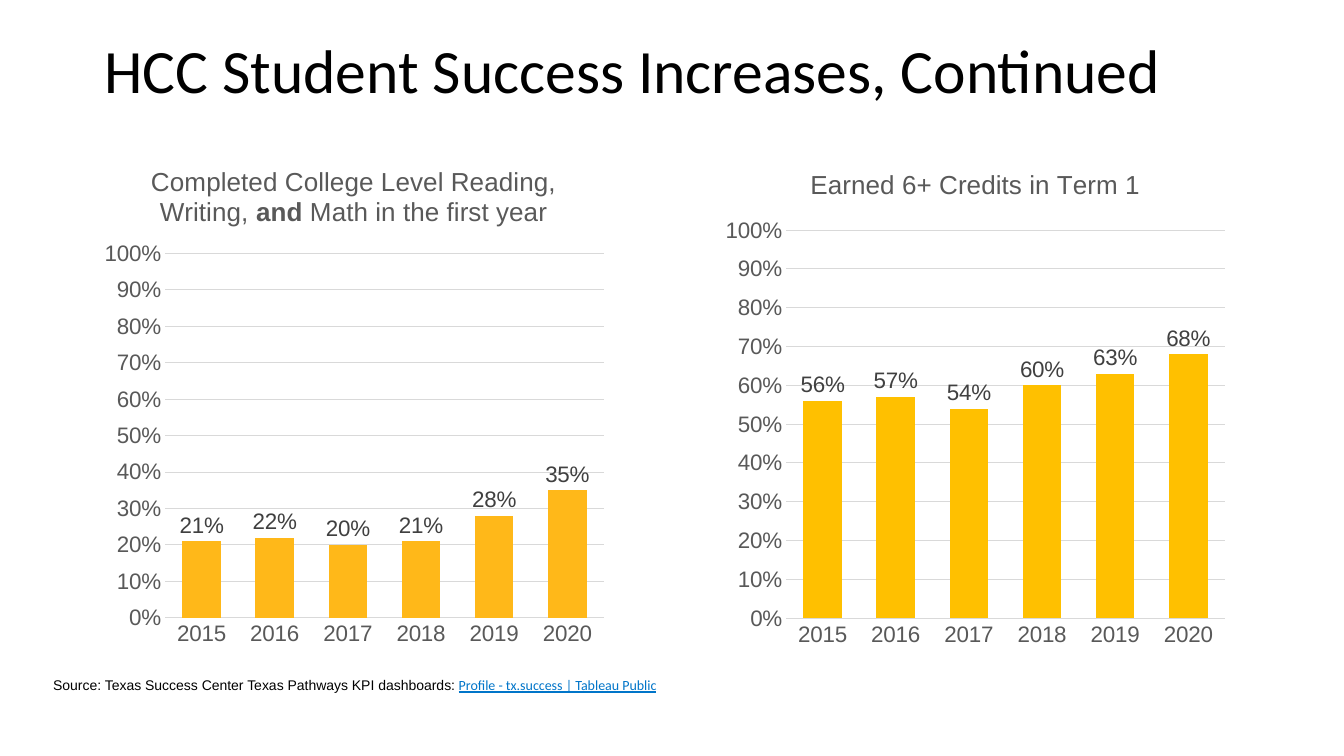
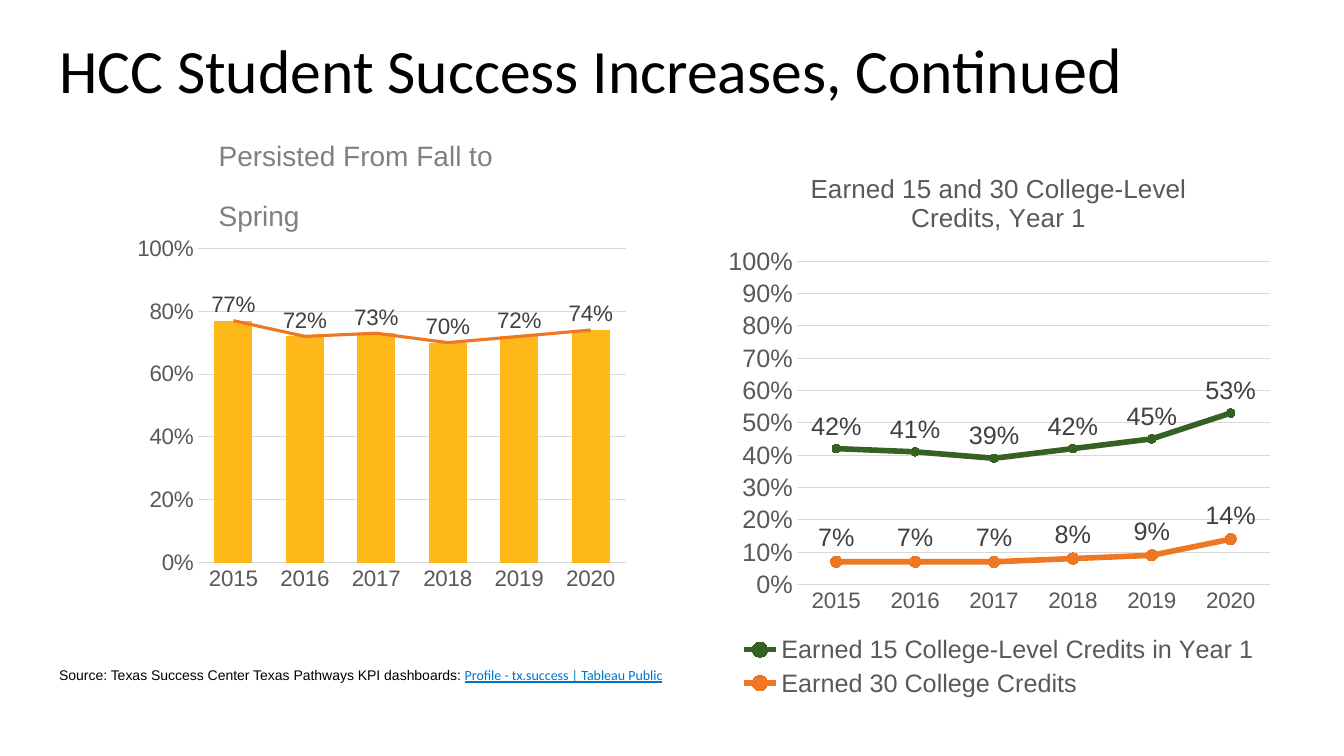
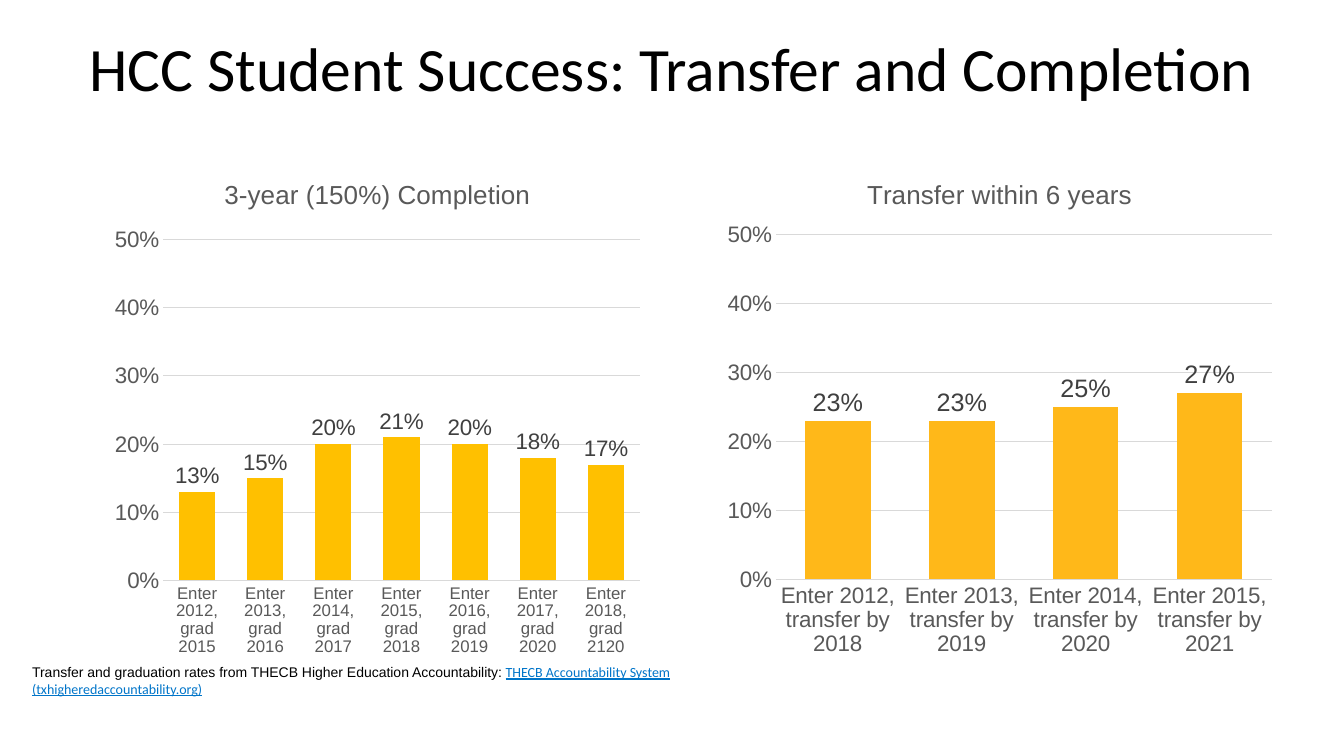
"""Build three slides of student success charts."""
from lxml import etree
from pptx import Presentation
from pptx.chart.data import CategoryChartData
from pptx.dml.color import RGBColor
from pptx.enum.chart import (
    XL_CHART_TYPE as ChartType,
    XL_LABEL_POSITION as LabelPosition,
    XL_LEGEND_POSITION as LegendPosition,
    XL_MARKER_STYLE as MarkerStyle,
    XL_TICK_MARK as TickMark,
)
from pptx.enum.text import MSO_ANCHOR as Anchor
from pptx.oxml import parse_xml
from pptx.oxml.ns import nsdecls, qn
from pptx.util import Cm, Pt

BLACK = RGBColor(0x00, 0x00, 0x00)
GREY = RGBColor(0x59, 0x59, 0x59)
LABEL_GREY = RGBColor(0x40, 0x40, 0x40)
HEADING_GREY = RGBColor(0x80, 0x80, 0x80)
GRID_GREY = RGBColor(0xD9, 0xD9, 0xD9)
LINK_BLUE = RGBColor(0x00, 0x75, 0xC9)
AMBER = RGBColor(0xFF, 0xC0, 0x00)
GOLD = RGBColor(0xFF, 0xB8, 0x19)
ORANGE = RGBColor(0xEF, 0x76, 0x22)
GREEN = RGBColor(0x35, 0x62, 0x22)

YEARS = [str(year) for year in range(2015, 2021)]
KPI_SOURCE = "Source: Texas Success Center Texas Pathways KPI dashboards: "
KPI_LINK = "Profile - tx.success | Tableau Public"


def style_font(font, size=None, color=None, name=None, bold=None, underline=None):
    if size:
        font.size = Pt(size)
    if color is not None:
        font.color.rgb = color
    if name:
        font.name = name
    if bold is not None:
        font.bold = bold
    if underline is not None:
        font.underline = underline


def write_runs(paragraph, runs, **style):
    style_font(paragraph.font, **style)
    for text, own_style in runs:
        run = paragraph.add_run()
        run.text = text
        style_font(run.font, **own_style)


def add_text(slide, box, runs, anchor=Anchor.TOP, spacing=None, **style):
    frame = slide.shapes.add_textbox(*map(Cm, box)).text_frame
    frame.word_wrap = True
    frame.vertical_anchor = anchor
    paragraph = frame.paragraphs[0]
    if spacing:
        paragraph.line_spacing = spacing
    write_runs(paragraph, runs, **style)


def add_title(slide, box, *runs):
    add_text(slide, box, runs, Anchor.MIDDLE, 0.9, size=44, color=BLACK, name="Calibri")


def add_source(slide, box, text, link):
    link_style = {"name": "Calibri", "color": LINK_BLUE, "underline": True}
    add_text(slide, box, [(text, {"name": "Arial", "color": BLACK}), (link, link_style)], size=10)


def set_plot_layout(chart, box, plot_box):
    left, top, width, height = box
    plot_left, plot_top, plot_width, plot_height = plot_box
    fractions = ((plot_left - left) / width, (plot_top - top) / height,
                 plot_width / width, plot_height / height)
    plot_area = chart.element.find(".//" + qn("c:plotArea"))
    for layout in plot_area.findall(qn("c:layout")):
        plot_area.remove(layout)
    layout = parse_xml(f"<c:layout {nsdecls('c')}><c:manualLayout/></c:layout>")
    settings = [("layoutTarget", "inner"), ("xMode", "edge"), ("yMode", "edge")]
    settings += zip("xywh", fractions)
    for tag, value in settings:
        etree.SubElement(layout[0], qn("c:" + tag)).set("val", str(value))
    plot_area.insert(0, layout)


def style_axes(chart, maximum, step, category_size, value_size):
    value_axis, category_axis = chart.value_axis, chart.category_axis
    for axis, size in ((category_axis, category_size), (value_axis, value_size)):
        axis.major_tick_mark = axis.minor_tick_mark = TickMark.NONE
        style_font(axis.tick_labels.font, size, GREY, "Arial")
    value_axis.minimum_scale = 0
    value_axis.maximum_scale = maximum
    value_axis.major_unit = step
    value_axis.tick_labels.number_format = "0%"
    value_axis.tick_labels.number_format_is_linked = False
    value_axis.format.line.fill.background()
    for line in (category_axis.format.line, value_axis.major_gridlines.format.line):
        line.color.rgb = GRID_GREY
        line.width = Pt(0.75)


def add_labels(series, size, position):
    labels = series.data_labels
    labels.show_value = True
    labels.position = position
    labels.number_format = "0%"
    labels.number_format_is_linked = False
    style_font(labels.font, size, LABEL_GREY, "Arial")


def style_line(series, color, width):
    series.smooth = False
    series.format.line.color.rgb = color
    series.format.line.width = Pt(width)


def add_chart(slide, kind, box, plot_box, categories, series_values, title=(),
              maximum=1, step=0.1, category_size=16, value_size=16):
    data = CategoryChartData(number_format="0%")
    data.categories = categories
    for name, values in series_values:
        data.add_series(name, values)
    chart = slide.shapes.add_chart(kind, *map(Cm, box), data).chart
    style_font(chart.font, 10, BLACK, "Arial")
    chart.has_legend = False
    chart.has_title = bool(title)
    if title:
        paragraph = chart.chart_title.text_frame.paragraphs[0]
        write_runs(paragraph, title, size=18.6, color=GREY, name="Arial", bold=False)
        chart.chart_title.include_in_layout = False
    style_axes(chart, maximum, step, category_size, value_size)
    set_plot_layout(chart, box, plot_box)
    chart.plots[0].vary_by_categories = False
    return chart


def add_columns(slide, box, plot_box, categories, values, color, title=(),
                label_size=16, trend=None, **axis_options):
    series_values = [("Series 1", values)]
    if trend:
        series_values.append(("Series 2", trend))
    chart = add_chart(slide, ChartType.COLUMN_CLUSTERED, box, plot_box,
                      categories, series_values, title, **axis_options)
    plot = chart.plots[0]
    plot.gap_width = 89
    plot.overlap = -27
    columns = plot.series[0]
    columns.format.fill.solid()
    columns.format.fill.fore_color.rgb = color
    add_labels(columns, label_size, LabelPosition.OUTSIDE_END)
    if trend:
        move_last_series_to_line(chart)
        line = chart.plots[1].series[0]
        style_line(line, ORANGE, 2.25)
        line.marker.style = MarkerStyle.NONE


def move_last_series_to_line(chart):
    bar_chart = chart.element.find(".//" + qn("c:barChart"))
    series = bar_chart.findall(qn("c:ser"))[-1]
    for element in series.findall(qn("c:invertIfNegative")):
        series.remove(element)
    line_chart = parse_xml(
        f"<c:lineChart {nsdecls('c')}><c:grouping val='standard'/>"
        "<c:varyColors val='0'/></c:lineChart>"
    )
    line_chart.append(series)
    etree.SubElement(line_chart, qn("c:marker")).set("val", "1")
    for axis_id in bar_chart.findall(qn("c:axId")):
        etree.SubElement(line_chart, qn("c:axId")).set("val", axis_id.get("val"))
    bar_chart.addnext(line_chart)


def add_credit_lines(slide):
    chart = add_chart(
        slide, ChartType.LINE_MARKERS, (18.06, 3.78, 14.22, 13.92), (20.08, 6.58, 11.93, 8.15), YEARS,
        [("Earned 15 College-Level Credits in Year 1", (0.42, 0.41, 0.39, 0.42, 0.45, 0.53)),
         ("Earned 30 College Credits", (0.07, 0.07, 0.07, 0.08, 0.09, 0.14))],
        [("Earned 15 and 30 College-Level Credits, Year 1", {})], value_size=18,
    )
    for series, color, marker_size in zip(chart.plots[0].series, (GREEN, ORANGE), (6, 8)):
        style_line(series, color, 4)
        series.marker.style = MarkerStyle.CIRCLE
        series.marker.size = marker_size
        series.marker.format.fill.solid()
        series.marker.format.fill.fore_color.rgb = color
        series.marker.format.line.color.rgb = color
        add_labels(series, 18, LabelPosition.ABOVE)
    chart.has_legend = True
    chart.legend.position = LegendPosition.BOTTOM
    chart.legend.include_in_layout = False
    style_font(chart.legend.font, 18, GREY, "Arial")


def build_first_year(slide):
    add_columns(slide, (18.03, 3.71, 13.11, 12.85), (19.81, 5.8, 11.06, 9.78), YEARS,
                (0.56, 0.57, 0.54, 0.6, 0.63, 0.68), AMBER,
                [("Earned 6+ Credits in Term 1", {})])
    add_columns(slide, (2.36, 3.71, 13.11, 12.85), (4.16, 6.39, 11.06, 9.18), YEARS,
                (0.21, 0.22, 0.2, 0.21, 0.28, 0.35), GOLD,
                [("Completed College Level Reading, Writing, ", {}), ("and", {"bold": True}),
                 (" Math in the first year", {})])
    add_title(slide, (2.38, 0, 29.51, 3.71), ("HCC Student Success Increases, Continued", {}))
    add_source(slide, (1.09, 16.92, 16.94, 0.69), KPI_SOURCE, KPI_LINK)


def build_persistence(slide):
    add_title(slide, (1.24, 0, 32.63, 3.71),
              ("HCC Student Success Increases, Continu", {}), ("ed", {"name": "Arial"}))
    persisted = (0.77, 0.72, 0.73, 0.7, 0.72, 0.74)
    add_columns(slide, (2.92, 5.94, 13.23, 10.24), (4.98, 6.26, 10.81, 7.92), YEARS,
                persisted, GOLD, trend=persisted, step=0.2)
    add_credit_lines(slide)
    add_text(slide, (5.26, 2.7, 8.53, 3.28), [("Persisted From Fall to Spring", {})],
             Anchor.MIDDLE, Pt(43), size=20, color=HEADING_GREY, name="Arial")
    add_source(slide, (1.24, 16.67, 16.94, 0.69), KPI_SOURCE, KPI_LINK)


def build_completion(slide):
    transfers = [f"Enter {year}, transfer by {year + 6}" for year in range(2012, 2016)]
    graduations = [f"Enter {year}, grad {year + 3}" for year in range(2012, 2018)]
    graduations.append("Enter 2018, grad 2120")
    add_columns(slide, (18.06, 3.96, 14.27, 12.85), (19.55, 5.91, 12.5, 8.69), transfers,
                (0.23, 0.23, 0.25, 0.27), GOLD, [("Transfer within 6 years", {})],
                label_size=18, maximum=0.5)
    add_columns(slide, (2.62, 3.96, 13.79, 12.85), (4.11, 6.04, 12.02, 8.59), graduations,
                (0.13, 0.15, 0.2, 0.21, 0.2, 0.18, 0.17), AMBER,
                [("3-year (150%) Completion", {})], maximum=0.5, category_size=12)
    add_title(slide, (2, 0, 30.71, 3.6), ("HCC Student Success: Transfer and Completion", {}))
    add_source(slide, (0.56, 16.59, 16.94, 1.12),
               "Transfer and graduation rates from THECB Higher Education Accountability: ",
               "THECB Accountability System (txhigheredaccountability.org)")


def main():
    presentation = Presentation()
    presentation.slide_width, presentation.slide_height = Cm(33.87), Cm(19.05)
    for build in (build_first_year, build_persistence, build_completion):
        build(presentation.slides.add_slide(presentation.slide_layouts[6]))
    presentation.save("out.pptx")


if __name__ == "__main__":
    main()
